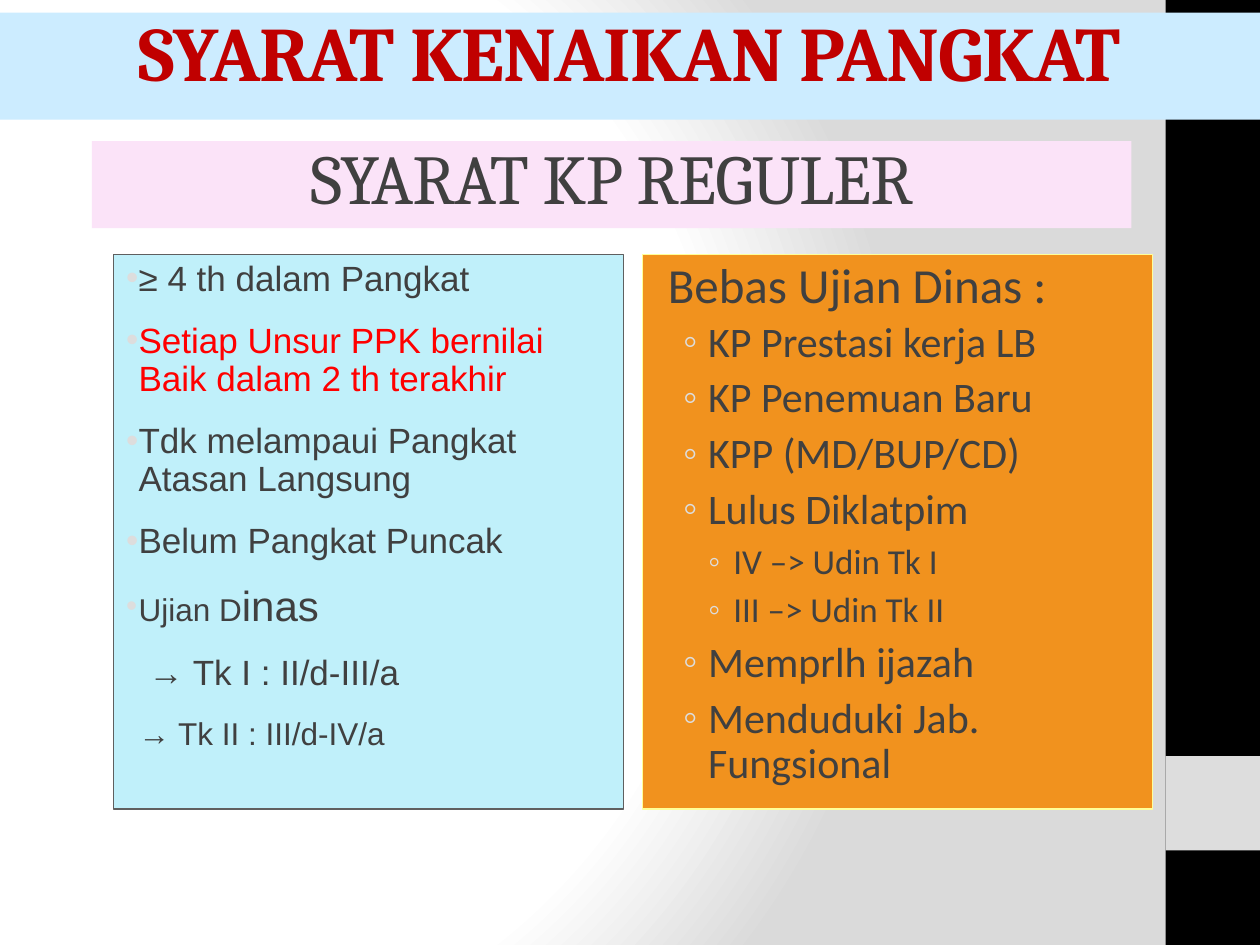
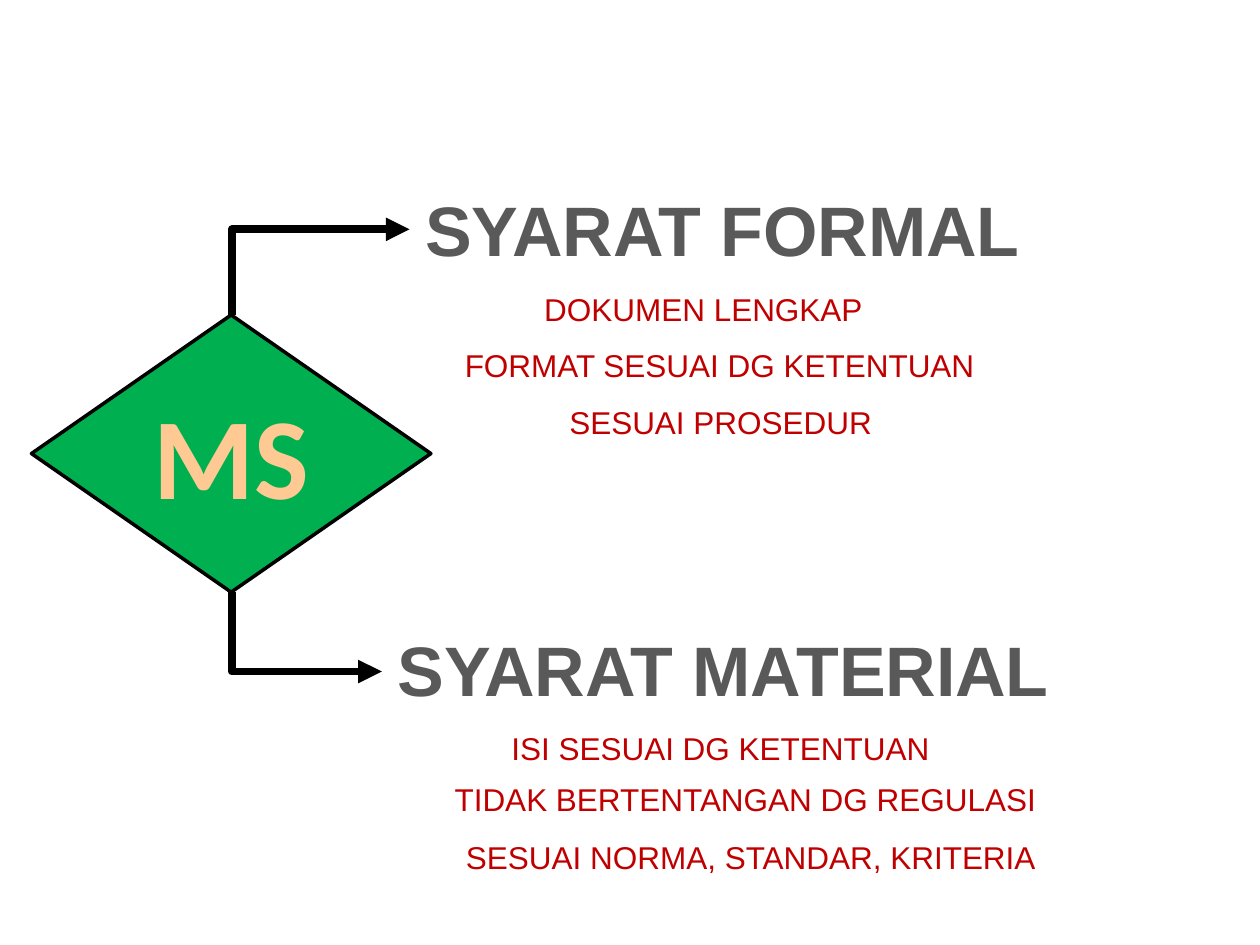
from dataclasses import dataclass

from pptx import Presentation
from pptx.dml.color import RGBColor
from pptx.enum.shapes import MSO_CONNECTOR, MSO_SHAPE
from pptx.enum.text import MSO_ANCHOR, MSO_AUTO_SIZE, PP_ALIGN
from pptx.oxml import parse_xml
from pptx.oxml.ns import nsdecls, qn
from pptx.oxml.xmlchemy import OxmlElement
from pptx.util import Inches, Pt

BLACK = RGBColor(0x00, 0x00, 0x00)
SILVER = RGBColor(0xDD, 0xDD, 0xDD)
DARK = RGBColor(0x40, 0x40, 0x40)
GRAY = RGBColor(0x59, 0x59, 0x59)
EDGE = RGBColor(0x5F, 0x5F, 0x5F)
RED = RGBColor(0xFF, 0x00, 0x00)
MAROON = RGBColor(0xC0, 0x00, 0x00)
SKY = RGBColor(0xCC, 0xEC, 0xFF)
AQUA = RGBColor(0xC0, 0xF0, 0xFA)
PINK = RGBColor(0xFB, 0xE3, 0xF8)
ORANGE = RGBColor(0xF1, 0x92, 0x1E)
LEMON = RGBColor(0xFF, 0xFF, 0x99)
GREEN = RGBColor(0x00, 0xB0, 0x50)
PEACH = RGBColor(0xFF, 0xC9, 0x93)

BACK = f"""<p:bg {nsdecls("p", "a")}><p:bgPr><a:gradFill rotWithShape="1"><a:gsLst>
<a:gs pos="0"><a:srgbClr val="FFFFFF"/></a:gs>
<a:gs pos="75000"><a:srgbClr val="FFFFFF"/></a:gs>
<a:gs pos="100000"><a:srgbClr val="DADADA"/></a:gs></a:gsLst>
<a:path path="circle"><a:fillToRect l="20000" t="50000" r="100000" b="50000"/></a:path>
</a:gradFill><a:effectLst/></p:bgPr></p:bg>"""
STROKE = f"""<a:ln {nsdecls("a")} w="12700"><a:solidFill>
<a:srgbClr val="808080"/></a:solidFill></a:ln>"""


@dataclass(frozen=True)
class Box:
    left: float
    top: float
    width: float
    height: float

    def args(self) -> tuple:
        return tuple(Inches(n) for n in (self.left, self.top, self.width, self.height))


@dataclass(frozen=True)
class Style:
    font: str
    size: float
    color: RGBColor
    bold: bool = False


@dataclass(frozen=True)
class Item:
    """A list line; runs pair each text with its size."""
    runs: tuple
    mark: str = "•"
    level: int = 0
    color: RGBColor = DARK
    left: float = 0.1
    hang: float = 0.1
    before: float = 12
    after: float = 2


@dataclass(frozen=True)
class Branch:
    head: str
    spot: Box
    lines: tuple
    start: tuple
    end: tuple
    turn: int
    flips: tuple


def plain(text: str, left: float, size: float) -> Item:
    return Item(((text, size),), "", left=left, hang=0)


def sub(text: str, level: int = 1) -> Item:
    size, left = {1: (24, 0.42), 2: (20, 0.62)}[level]
    return Item(((text, size),), "◦", level, left=left, hang=0.2, before=2, after=4)


RULES = (
    Item((("≥ 4 th dalam Pangkat", 20),)),
    Item((("Setiap Unsur PPK bernilai Baik dalam 2 th terakhir", 20),), color=RED),
    Item((("Tdk melampaui Pangkat Atasan Langsung", 20),)),
    Item((("Belum Pangkat Puncak", 20),)),
    Item((("Ujian D", 18), ("inas", 24))),
    plain("→ Tk I : II/d-III/a", 0.18, 20),
    plain("→ Tk II : III/d-IV/a", 0.1, 18),
)
EXEMPT = (
    plain("Bebas Ujian Dinas :", 0.1, 28),
    sub("KP Prestasi kerja LB"),
    sub("KP Penemuan Baru"),
    sub("KPP (MD/BUP/CD)"),
    sub("Lulus Diklatpim"),
    sub("IV –> Udin Tk I", 2),
    sub("III –> Udin Tk II", 2),
    sub("Memprlh ijazah"),
    sub("Menduduki Jab. Fungsional"),
)
BRANCHES = (
    Branch("SYARAT FORMAL", Box(3.25, 1.43, 4.97, 0.77), (
        ("DOKUMEN LENGKAP", Box(4.22, 2.25, 2.75, 0.4)),
        ("FORMAT SESUAI DG KETENTUAN", Box(3.59, 2.7, 4.29, 0.4)),
        ("SESUAI PROSEDUR", Box(4.42, 3.15, 2.63, 0.4)),
    ), (1.84, 2.5), (3.25, 1.82), 90, ("flipH", "flipV")),
    Branch("SYARAT MATERIAL", Box(3.03, 4.92, 5.42, 0.77), (
        ("ISI SESUAI DG KETENTUAN", Box(3.96, 5.74, 3.55, 0.4)),
        ("TIDAK BERTENTANGAN DG REGULASI", Box(3.51, 6.14, 4.86, 0.4)),
        ("SESUAI NORMA, STANDAR, KRITERIA", Box(3.6, 6.6, 4.77, 0.4)),
    ), (1.84, 4.7), (3.03, 5.33), 270, ("flipH",)),
)
BANNER = Style("Cambria", 44, MAROON, True)
STRIP = Style("Cambria", 40, DARK)
HEAD = Style("Arial", 40, GRAY, True)
NOTE = Style("Arial", 18, MAROON)
BADGE = Style("Calibri", 66, PEACH, True)


def add_run(para, text: str, style: Style):
    run = para.add_run()
    run.text = text
    font = run.font
    font.name, font.size, font.bold = style.font, Pt(style.size), style.bold
    font.color.rgb = style.color
    return run


def paint(shape, fill: RGBColor, line: RGBColor = None, width: float = 0.75) -> None:
    shape.fill.solid()
    shape.fill.fore_color.rgb = fill
    if line is None:
        shape.line.fill.background()
    else:
        shape.line.color.rgb = line
        shape.line.width = Pt(width)


def add_block(slide, kind, box: Box, fill: RGBColor, line=None, width=0.75):
    shape = slide.shapes.add_shape(kind, *box.args())
    shape.shadow.inherit = False
    paint(shape, fill, line, width)
    return shape


def place(shape, box: Box) -> None:
    shape.left, shape.top, shape.width, shape.height = box.args()


def set_band(shape, text: str, style: Style) -> None:
    frame = shape.text_frame
    frame.auto_size = MSO_AUTO_SIZE.NONE
    frame.vertical_anchor = MSO_ANCHOR.TOP
    para = frame.paragraphs[0]
    para.alignment = PP_ALIGN.CENTER
    para.line_spacing = 0.85
    run = add_run(para, text, style)
    run._r.get_or_add_rPr().set("spc", "-50")


def set_mark(para, item: Item) -> None:
    props = para._p.get_or_add_pPr()
    props.set("marL", str(Inches(item.left)))
    props.set("indent", str(-Inches(item.hang)))
    if not item.mark:
        props.append(OxmlElement("a:buNone"))
        return
    tint = OxmlElement("a:buClr")
    color = OxmlElement("a:srgbClr")
    color.set("val", str(SILVER))
    tint.append(color)
    mark = OxmlElement("a:buChar")
    mark.set("char", item.mark)
    props.extend((tint, mark))


def fill_list(shape, items: tuple, font: str) -> None:
    frame = shape.text_frame
    frame.auto_size = MSO_AUTO_SIZE.NONE
    for i, item in enumerate(items):
        para = frame.add_paragraph() if i else frame.paragraphs[0]
        set_mark(para, item)
        para.level = item.level
        para.line_spacing = 0.9
        para.space_before = Pt(item.before if i else 0)
        para.space_after = Pt(item.after)
        for text, size in item.runs:
            add_run(para, text, Style(font, size, item.color))


def add_label(slide, text: str, box: Box, style: Style, align=PP_ALIGN.LEFT):
    frame = slide.shapes.add_textbox(*box.args()).text_frame
    frame.word_wrap = False
    frame.auto_size = MSO_AUTO_SIZE.SHAPE_TO_FIT_TEXT
    para = frame.paragraphs[0]
    para.alignment = align
    return add_run(para, text, style)


def add_elbow(slide, branch: Branch) -> None:
    """Draw a one-bend arrow, stored as a box turned about its centre."""
    (x1, y1), (x2, y2) = branch.start, branch.end
    wide, high = abs(y2 - y1), abs(x2 - x1)
    left, top = (x1 + x2 - wide) / 2, (y1 + y2 - high) / 2
    line = slide.shapes.add_connector(
        MSO_CONNECTOR.ELBOW, Inches(left), Inches(top),
        Inches(left + wide), Inches(top + high))
    line.line.color.rgb = BLACK
    line.line.width = Pt(4.5)
    props = line._element.spPr
    props.find(qn("a:prstGeom")).set("prst", "bentConnector2")
    frame = props.find(qn("a:xfrm"))
    frame.set("rot", str(branch.turn * 60000))
    for flip in branch.flips:
        frame.set(flip, "1")
    tip = OxmlElement("a:tailEnd")
    tip.set("type", "triangle")
    props.find(qn("a:ln")).append(tip)
    props.append(OxmlElement("a:effectLst"))


def build_terms(deck) -> None:
    slide = deck.slides.add_slide(deck.slide_layouts[3])
    slide.element.cSld.insert(0, parse_xml(BACK))
    bars = ((Box(9.25, 0, 0.75, 7.5), BLACK), (Box(9.25, 6, 0.75, 0.75), SILVER))
    for i, (box, color) in enumerate(bars):
        bar = add_block(slide, MSO_SHAPE.RECTANGLE, box, color)
        slide.shapes._spTree.insert(2 + i, bar._element)  # behind the title

    title = slide.shapes.title
    place(title, Box(0, 0.1, 10, 0.85))
    paint(title, SKY)
    set_band(title, "SYARAT KENAIKAN PANGKAT", BANNER)

    panels = ((1, 0.9, AQUA, EDGE, RULES, "Arial"),
              (2, 5.1, ORANGE, LEMON, EXEMPT, "Calibri"))
    for key, left, fill, line, items, font in panels:
        panel = slide.placeholders[key]
        place(panel, Box(left, 2.02, 4.05, 4.4))
        paint(panel, fill, line)
        fill_list(panel, items, font)

    strip = add_block(slide, MSO_SHAPE.RECTANGLE, Box(0.73, 1.12, 8.25, 0.69), PINK)
    set_band(strip, "SYARAT KP REGULER", STRIP)


def build_split(deck) -> None:
    slide = deck.slides.add_slide(deck.slide_layouts[6])
    badge = add_block(slide, MSO_SHAPE.FLOWCHART_DECISION,
                      Box(0.25, 2.5, 3.17, 2.2), GREEN, BLACK, 2)
    frame = badge.text_frame
    frame.vertical_anchor = MSO_ANCHOR.MIDDLE
    frame.paragraphs[0].alignment = PP_ALIGN.CENTER
    add_run(frame.paragraphs[0], "MS", BADGE)
    for branch in BRANCHES:
        run = add_label(slide, branch.head, branch.spot, HEAD, PP_ALIGN.CENTER)
        run._r.get_or_add_rPr().insert(0, parse_xml(STROKE))
        for text, box in branch.lines:
            add_label(slide, text, box, NOTE)
        add_elbow(slide, branch)


def main() -> None:
    deck = Presentation()
    deck.slide_width, deck.slide_height = Inches(10), Inches(7.5)
    build_terms(deck)
    build_split(deck)
    deck.save("out.pptx")


if __name__ == "__main__":
    main()
